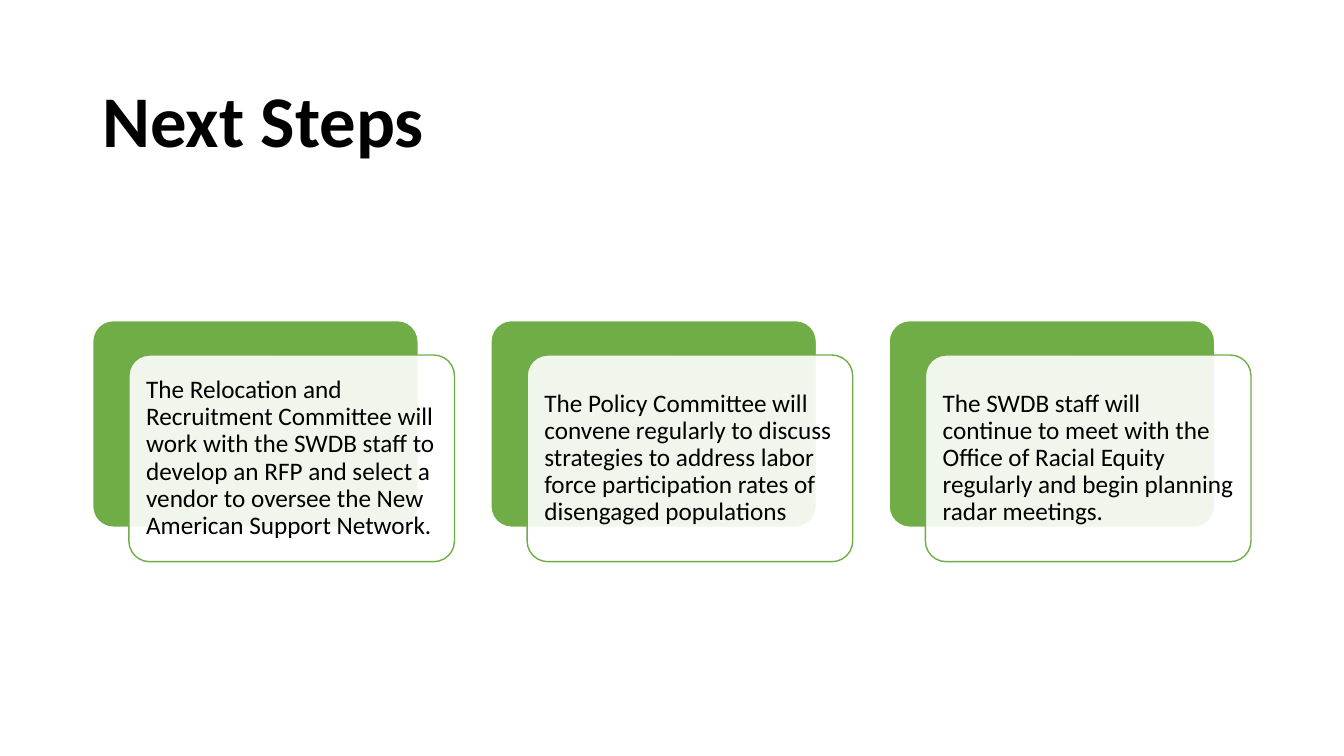
from lxml.etree import SubElement
from pptx import Presentation
from pptx.dml.color import RGBColor
from pptx.enum.shapes import MSO_SHAPE
from pptx.enum.text import MSO_ANCHOR, PP_ALIGN
from pptx.oxml.ns import qn
from pptx.util import Pt

GREEN = RGBColor(0x70, 0xAD, 0x47)
WHITE = RGBColor(0xFF, 0xFF, 0xFF)
BLACK = RGBColor(0x00, 0x00, 0x00)
FONT = "Calibri"

STEPS = [
    "The Relocation and Recruitment Committee will work with the SWDB staff to "
    "develop an RFP and select a vendor to oversee the New American Support Network.",
    "The Policy Committee will convene regularly to discuss strategies to address "
    "labor force participation rates of disengaged populations",
    "The SWDB staff will continue to meet with the Office of Racial Equity regularly "
    "and begin planning radar meetings.",
]


def format_paragraph(paragraph, size, bold=False):
    """Apply the slide's common text style to a paragraph."""
    paragraph.alignment = PP_ALIGN.LEFT
    paragraph.line_spacing = 0.9
    paragraph.font.name = FONT
    paragraph.font.size = Pt(size)
    paragraph.font.bold = bold
    paragraph.font.color.rgb = BLACK


def add_heading(slide, left, top, width, height):
    """Place the slide title in the given box."""
    heading = slide.shapes.title
    heading.left, heading.top = Pt(left), Pt(top)
    heading.width, heading.height = Pt(width), Pt(height)
    heading.text_frame.text = "Next Steps"
    heading.text_frame.vertical_anchor = MSO_ANCHOR.MIDDLE
    format_paragraph(heading.text_frame.paragraphs[0], 52, bold=True)


def add_card(slide, left, top, width, height, fill, outline):
    """Add one rounded card and return it."""
    card = slide.shapes.add_shape(
        MSO_SHAPE.ROUNDED_RECTANGLE, Pt(left), Pt(top), Pt(width), Pt(height)
    )
    card.adjustments[0] = 0.1
    card.shadow.inherit = False
    card.fill.solid()
    card.fill.fore_color.rgb = fill
    card.line.color.rgb = outline
    card.line.width = Pt(1)
    return card


def add_step(slide, left, top, width, height, step):
    """Fill the box with a green card and an overlapping translucent text card."""
    shift_x, shift_y = 25.9, 24.6
    card_size = width - shift_x, height - shift_y
    add_card(slide, left, top, *card_size, GREEN, WHITE)
    front = add_card(slide, left + shift_x, top + shift_y, *card_size, WHITE, GREEN)
    fill_color = front.fill._xPr.find(qn("a:solidFill"))[0]
    SubElement(fill_color, qn("a:alpha"), val="90000")

    frame = front.text_frame
    frame.word_wrap = True
    frame.vertical_anchor = MSO_ANCHOR.MIDDLE
    frame.margin_left = frame.margin_right = Pt(8)
    frame.margin_top = frame.margin_bottom = Pt(8)
    frame.text = step
    format_paragraph(frame.paragraphs[0], 18)


def add_steps(slide, left, top, width, height):
    """Spread the steps evenly across the given box."""
    gap = 26
    step_width = (width - gap * (len(STEPS) - 1)) / len(STEPS)
    for index, step in enumerate(STEPS):
        step_left = left + index * (step_width + gap)
        add_step(slide, step_left, top, step_width, height, step)


def main():
    """Build and save the slide."""
    presentation = Presentation()
    presentation.slide_width, presentation.slide_height = Pt(960), Pt(540)
    slide = presentation.slides.add_slide(presentation.slide_layouts[5])
    add_heading(slide, 66, 44, 828, 89)
    add_steps(slide, 66.2, 229, 827.4, 172.2)
    presentation.save("out.pptx")


if __name__ == "__main__":
    main()
